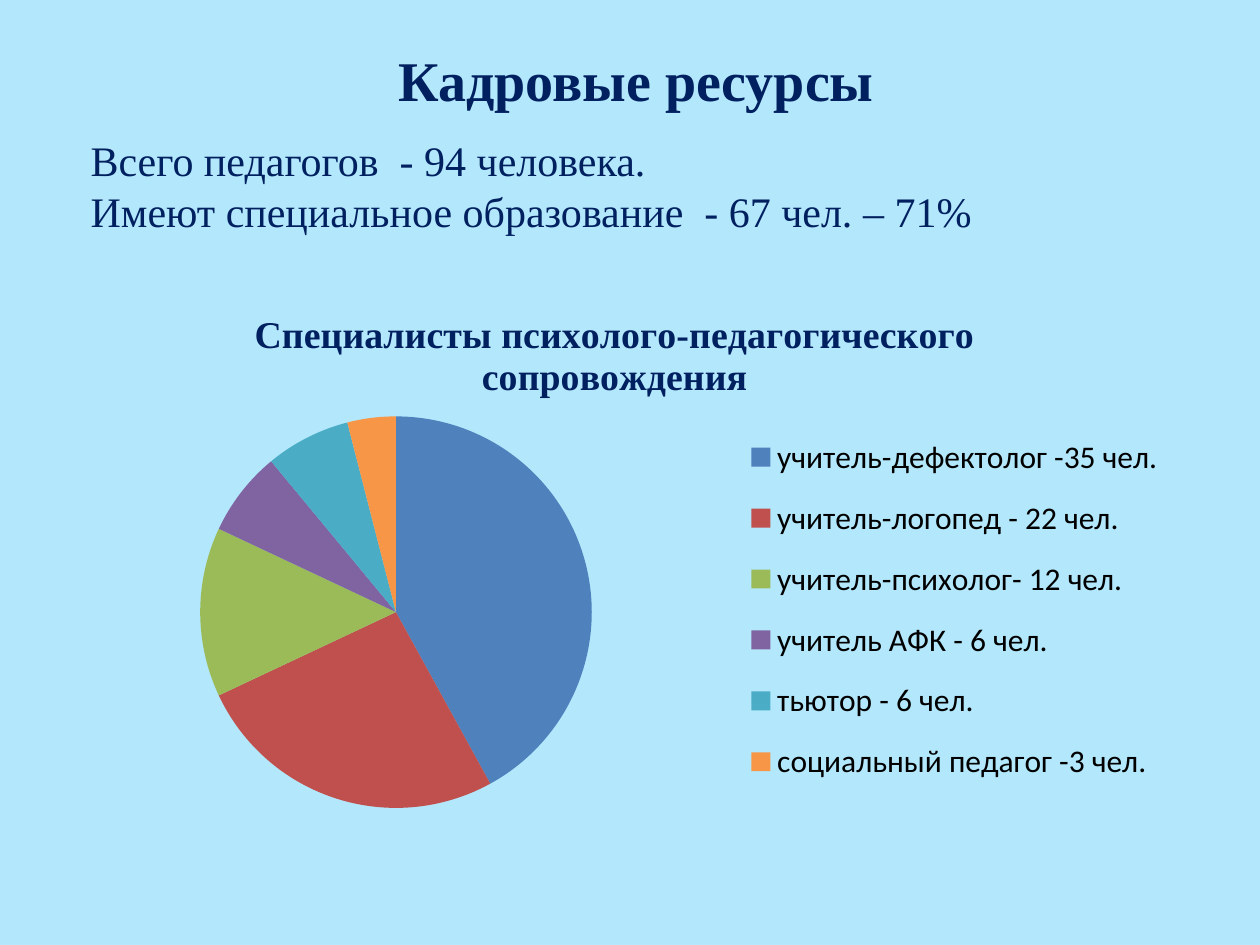
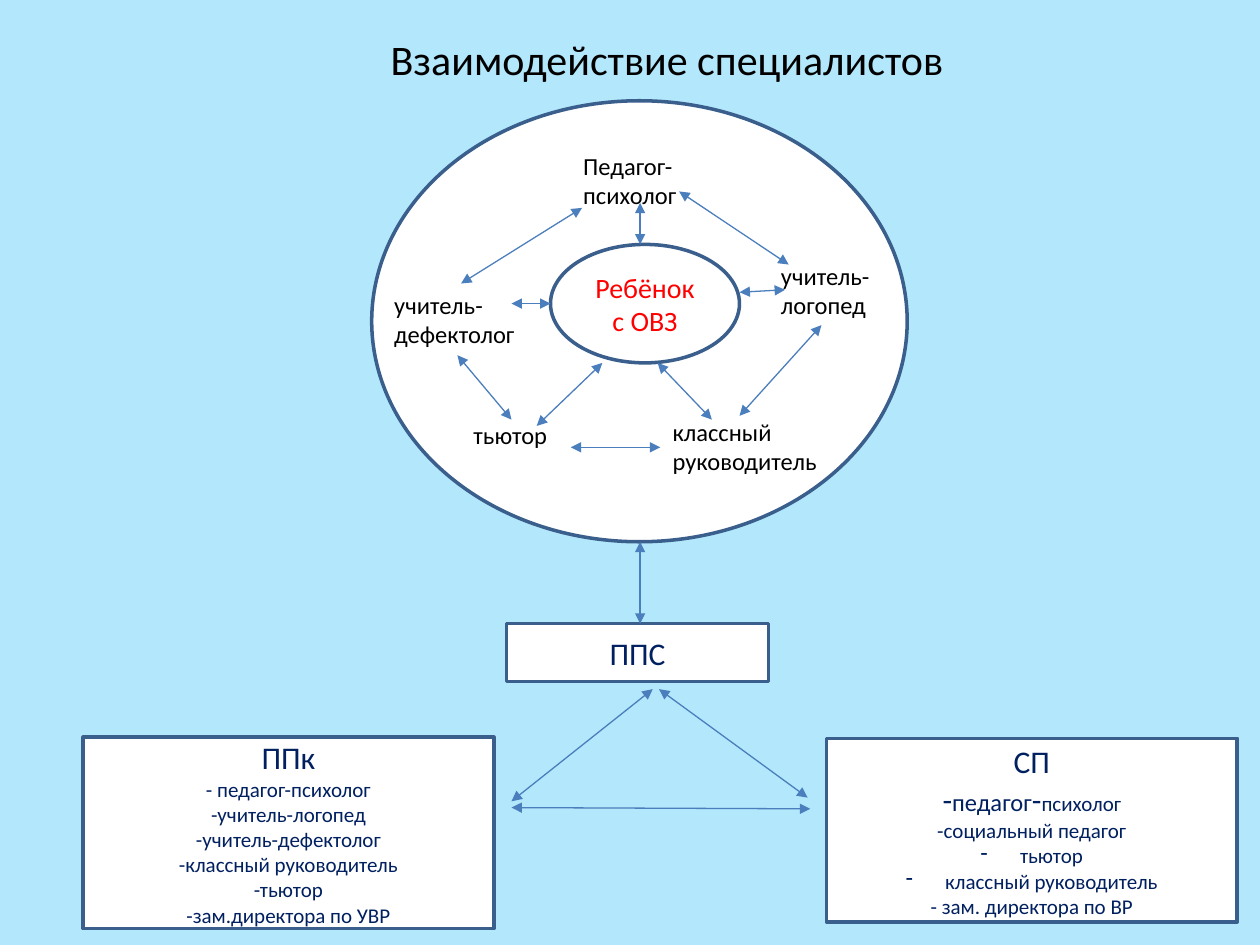
from dataclasses import dataclass

from lxml.etree import SubElement
from pptx import Presentation
from pptx.chart.data import CategoryChartData
from pptx.dml.color import RGBColor
from pptx.enum.chart import XL_CHART_TYPE as ChartType, XL_LEGEND_POSITION as LegendPosition
from pptx.enum.shapes import MSO_CONNECTOR as Connector, MSO_SHAPE as Preset
from pptx.enum.text import MSO_ANCHOR as Anchor, MSO_AUTO_SIZE as AutoSize, PP_ALIGN as Align
from pptx.oxml.ns import qn
from pptx.util import Pt

SKY = RGBColor(0xB3, 0xE7, 0xFB)
NAVY = RGBColor(0x00, 0x20, 0x60)
BLACK = RGBColor(0x00, 0x00, 0x00)
WHITE = RGBColor(0xFF, 0xFF, 0xFF)
RED = RGBColor(0xFF, 0x00, 0x00)
OUTLINE = RGBColor(0x3A, 0x5F, 0x8C)
ARROW = RGBColor(0x4B, 0x7E, 0xBC)
SLICE_COLORS = [
    RGBColor(0x4F, 0x81, 0xBD),
    RGBColor(0xC0, 0x50, 0x4D),
    RGBColor(0x9B, 0xBB, 0x59),
    RGBColor(0x80, 0x64, 0xA2),
    RGBColor(0x4B, 0xAC, 0xC6),
    RGBColor(0xF7, 0x96, 0x46),
]
SERIF = "Times New Roman"
SANS = "Calibri"
BULLET_INDENT = 22.5


@dataclass(frozen=True)
class Box:
    left: float
    top: float
    width: float
    height: float

    def lengths(self) -> list:
        return [Pt(v) for v in (self.left, self.top, self.width, self.height)]


@dataclass(frozen=True)
class Style:
    size: float
    color: RGBColor
    font: str = SANS
    bold: bool = False


@dataclass(frozen=True)
class Line:
    runs: tuple
    bulleted: bool = False


@dataclass(frozen=True)
class Figure:
    preset: Preset
    box: Box
    lines: tuple = ()


@dataclass(frozen=True)
class Label:
    text: str
    box: Box


@dataclass(frozen=True)
class Arrow:
    x1: float
    y1: float
    x2: float
    y2: float


HEADING = Style(32, NAVY, SERIF, True)
SUBHEADING = Style(24, BLACK)
SUMMARY = Style(24, NAVY, SERIF)
CHART_TITLE = Style(21.6, NAVY, SERIF, True)
LEGEND = Style(18, BLACK)
LABEL = Style(14, BLACK)
CHILD = Style(16, RED)
GROUP = Style(18, NAVY)
SUBGROUP = Style(14, NAVY)
MEMBER = Style(12, NAVY)


def line(text: str, style: Style, bulleted: bool = False) -> Line:
    return Line(((text, style),), bulleted)


SUMMARY_LINES = (
    line("Всего педагогов  - 94 человека.", SUMMARY),
    line("Имеют специальное образование  - 67 чел. – 71%", SUMMARY),
)
SPECIALISTS = {
    "учитель-дефектолог -35 чел.": 42,
    "учитель-логопед - 22 чел.": 26,
    "учитель-психолог- 12 чел.": 14,
    "учитель АФК - 6 чел.": 7,
    "тьютор - 6 чел.": 7,
    "социальный педагог -3 чел.": 4,
}
COUNCIL_MEMBERS = (
    "- педагог-психолог", "-учитель-логопед", "-учитель-дефектолог",
    "-классный руководитель", "-тьютор", "-зам.директора по УВР",
)
FIGURES = [
    Figure(Preset.OVAL, Box(212.4, 57.6, 306, 252)),
    Figure(Preset.OVAL, Box(314.6, 139.7, 108, 67.7), (line("Ребёнок с ОВЗ", CHILD),)),
    Figure(Preset.RECTANGLE, Box(289.4, 356.4, 149.8, 33.1), (line("ППС", GROUP),)),
    Figure(
        Preset.RECTANGLE, Box(47.5, 421.2, 234.7, 109.4),
        (line("ППк", GROUP), *(line(member, MEMBER) for member in COUNCIL_MEMBERS)),
    ),
    Figure(
        Preset.RECTANGLE, Box(472.3, 421.9, 234.7, 105.1),
        (
            line("СП", GROUP),
            Line((("-", GROUP), ("педагог", SUBGROUP), ("-", GROUP), ("психолог", MEMBER))),
            line("-социальный педагог", MEMBER),
            line("тьютор", MEMBER, True),
            line("классный руководитель", MEMBER, True),
            line("- зам. директора по ВР", MEMBER),
        ),
    ),
]
LABELS = [
    Label("Педагог-психолог", Box(326.2, 82.8, 108, 41)),
    Label("учитель-логопед", Box(439.2, 145.4, 84.2, 41)),
    Label("учитель-дефектолог", Box(218.2, 162, 90.7, 41)),
    Label("тьютор", Box(263.5, 236.2, 90.7, 24.5)),
    Label("классный руководитель", Box(377.3, 234.7, 108, 41)),
]
ARROWS = [
    Arrow(388.1, 109.4, 450.7, 151.2),
    Arrow(365.8, 115.9, 365.8, 139.7),
    Arrow(332.6, 118.8, 263.5, 162),
    Arrow(314.6, 173.5, 292.3, 173.5),
    Arrow(448.6, 165.6, 422.6, 167),
    Arrow(469.4, 185.8, 422.6, 237.6),
    Arrow(292.3, 239.8, 261.4, 203),
    Arrow(377.3, 255.6, 326.2, 255.6),
    Arrow(344.2, 207.4, 306.7, 243.4),
    Arrow(406.8, 239.8, 375.8, 207.4),
    Arrow(365.8, 356.4, 365.8, 309.6),
    Arrow(292.3, 457.9, 373, 393.8),
    Arrow(376.6, 393.8, 461.5, 455.8),
    Arrow(292.3, 461.5, 463, 462.2),
]


def apply_style(font, style: Style) -> None:
    font.size = Pt(style.size)
    font.name = style.font
    font.bold = style.bold
    font.color.rgb = style.color


def set_bullet(paragraph, bulleted: bool) -> None:
    properties = paragraph._p.get_or_add_pPr()
    indent = Pt(BULLET_INDENT) if bulleted else 0
    properties.set("marL", str(indent))
    properties.set("indent", str(-indent))
    if bulleted:
        SubElement(properties, qn("a:buChar")).set("char", "-")
    else:
        SubElement(properties, qn("a:buNone"))


def write_lines(frame, lines: tuple, align: Align, anchor: Anchor) -> None:
    frame.word_wrap = True
    frame.auto_size = AutoSize.NONE
    frame.vertical_anchor = anchor
    for index, item in enumerate(lines):
        paragraph = frame.add_paragraph() if index else frame.paragraphs[0]
        paragraph.alignment = align
        paragraph.space_before = Pt(0)
        set_bullet(paragraph, item.bulleted)
        for text, style in item.runs:
            run = paragraph.add_run()
            run.text = text
            apply_style(run.font, style)


def fill_placeholder(shape, box: Box, lines: tuple, align: Align, anchor: Anchor) -> None:
    shape.left, shape.top, shape.width, shape.height = box.lengths()
    write_lines(shape.text_frame, lines, align, anchor)


def add_title(slide, text: str, box: Box, style: Style) -> None:
    fill_placeholder(slide.shapes.title, box, (line(text, style),), Align.CENTER, Anchor.MIDDLE)


def add_figure(slide, figure: Figure) -> None:
    shape = slide.shapes.add_shape(figure.preset, *figure.box.lengths())
    shape.shadow.inherit = False
    shape.fill.solid()
    shape.fill.fore_color.rgb = WHITE
    shape.line.color.rgb = OUTLINE
    shape.line.width = Pt(2)
    write_lines(shape.text_frame, figure.lines, Align.CENTER, Anchor.MIDDLE)


def add_label(slide, label: Label) -> None:
    shape = slide.shapes.add_textbox(*label.box.lengths())
    write_lines(shape.text_frame, (line(label.text, LABEL),), Align.LEFT, Anchor.TOP)


def add_arrow(slide, arrow: Arrow) -> None:
    ends = [Pt(v) for v in (arrow.x1, arrow.y1, arrow.x2, arrow.y2)]
    connector = slide.shapes.add_connector(Connector.STRAIGHT, *ends)
    connector.line.color.rgb = ARROW
    connector.line.width = Pt(0.75)
    outline = connector.line._get_or_add_ln()
    for end in ("a:headEnd", "a:tailEnd"):
        SubElement(outline, qn(end)).set("type", "triangle")
    SubElement(connector._element.spPr, qn("a:effectLst"))


def place_chart_part(element, position: int, box: Box, inner: bool = False) -> None:
    for old_layout in element.findall(qn("c:layout")):
        element.remove(old_layout)
    layout = SubElement(element, qn("c:layout"))
    element.insert(position, layout)
    manual = SubElement(layout, qn("c:manualLayout"))
    settings = {"layoutTarget": "inner"} if inner else {}
    settings |= {"xMode": "edge", "yMode": "edge", "x": box.left, "y": box.top,
                 "w": box.width, "h": box.height}
    for name, value in settings.items():
        SubElement(manual, qn(f"c:{name}")).set("val", str(value))


def add_specialists_chart(slide, box: Box) -> None:
    data = CategoryChartData()
    data.categories = list(SPECIALISTS)
    data.add_series("Series 1", list(SPECIALISTS.values()))
    chart = slide.shapes.add_chart(ChartType.PIE, *box.lengths(), data).chart
    apply_style(chart.font, LEGEND)
    chart.has_title = True
    run = chart.chart_title.text_frame.paragraphs[0].add_run()
    run.text = "Специалисты психолого-педагогического сопровождения"
    apply_style(run.font, CHART_TITLE)
    chart.has_legend = True
    chart.legend.position = LegendPosition.RIGHT
    chart.legend.include_in_layout = False
    apply_style(chart.legend.font, LEGEND)
    plot = chart.plots[0]
    plot.vary_by_categories = True
    for index, color in enumerate(SLICE_COLORS):
        fill = plot.series[0].points[index].format.fill
        fill.solid()
        fill.fore_color.rgb = color
    place_chart_part(chart._chartSpace.chart.plotArea, 0, Box(0.14, 0.24, 0.34, 0.73), True)
    place_chart_part(chart.legend._element, 1, Box(0.6, 0.24, 0.39, 0.72))


def build_staff_slide(presentation) -> None:
    slide = presentation.slides.add_slide(presentation.slide_layouts[1])
    add_title(slide, "Кадровые ресурсы", Box(39.6, 5.8, 648, 78.5), HEADING)
    fill_placeholder(slide.placeholders[1], Box(44.6, 73.4, 624.2, 65.5),
                     SUMMARY_LINES, Align.LEFT, Anchor.TOP)
    add_specialists_chart(slide, Box(22.3, 163.4, 658.1, 308.2))


def build_interaction_slide(presentation) -> None:
    slide = presentation.slides.add_slide(presentation.slide_layouts[5])
    add_title(slide, "Взаимодействие специалистов", Box(36, 9.4, 648, 48.2), SUBHEADING)
    slide.shapes.title.text_frame.margin_left = Pt(49.5)
    for figure in FIGURES:
        add_figure(slide, figure)
    for label in LABELS:
        add_label(slide, label)
    for arrow in ARROWS:
        add_arrow(slide, arrow)


def main() -> None:
    presentation = Presentation()
    presentation.slide_width, presentation.slide_height = Pt(720), Pt(540)
    background = presentation.slide_master.background.fill
    background.solid()
    background.fore_color.rgb = SKY
    build_staff_slide(presentation)
    build_interaction_slide(presentation)
    presentation.save("out.pptx")


if __name__ == "__main__":
    main()
